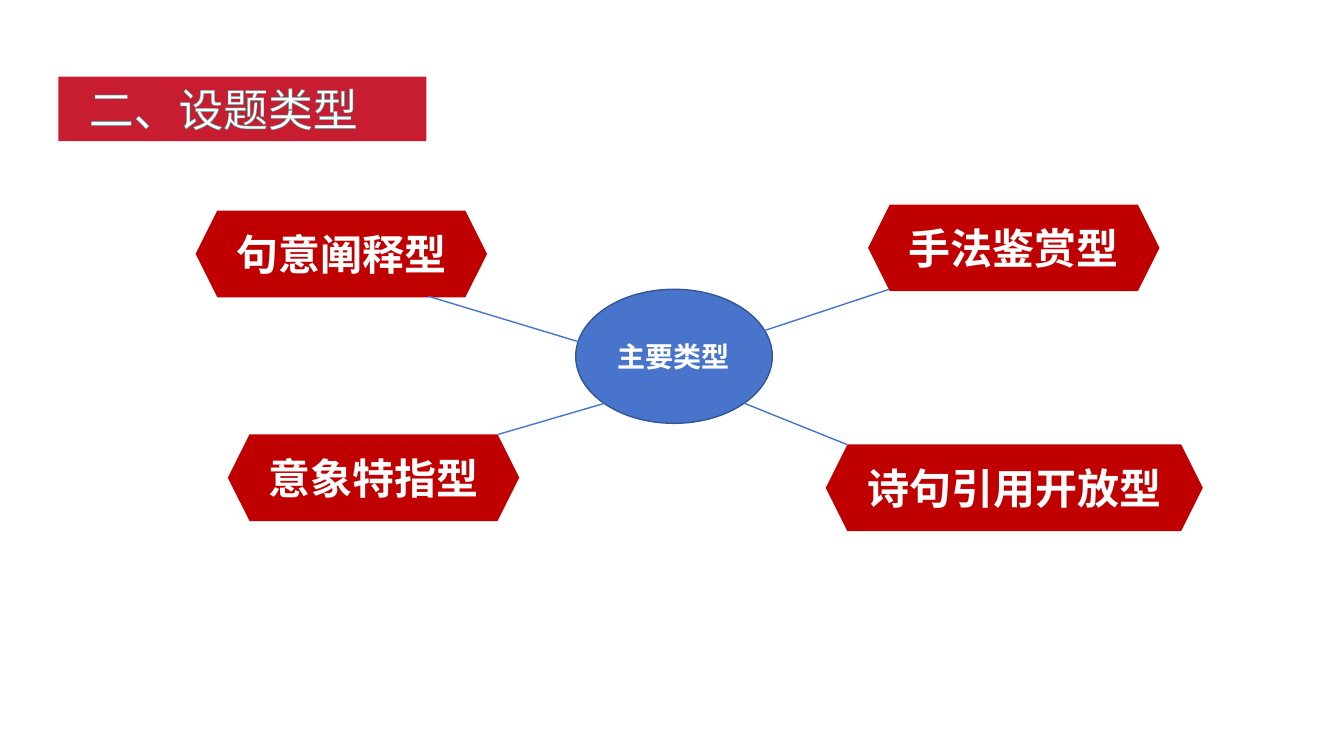
from lxml import etree
from pptx import Presentation
from pptx.dml.color import RGBColor
from pptx.enum.shapes import MSO_CONNECTOR, MSO_SHAPE
from pptx.enum.text import MSO_ANCHOR, PP_ALIGN
from pptx.oxml import parse_xml
from pptx.oxml.ns import nsdecls, qn
from pptx.util import Inches, Pt

CJK = "Noto Sans CJK SC"
RED, CRIMSON, BLUE, NAVY, TEAL, WHITE = (
    "C00000", "C81D31", "4874CB", "355696", "30C0B4", "FFFFFF")

HEADING = ("二、设题类型", (0.58, 0.76, 3.65, 0.64))
HUB = ("主要类型", (5.71, 2.87, 1.95, 1.33))
TYPE_HEIGHT = 0.86
TYPES = [
    ("句意阐释型", (1.94, 2.09), 2.89),
    ("手法鉴赏型", (8.61, 2.03), 2.89),
    ("意象特指型", (2.26, 4.31), 2.89),
    ("诗句引用开放型", (8.19, 4.41), 3.74),
]
SPOKES = [
    ((7.34, 3.36), (8.82, 2.87)),
    ((5.77, 3.4), (4.25, 2.94)),
    ((4.94, 4.31), (6, 4)),
    ((8.4, 4.41), (7.38, 4)),
]


def color(code):
    return RGBColor.from_string(code)


def add_label(slide, outline, words, box, fill, size, font, bold=True,
              align=PP_ALIGN.CENTER, anchor=MSO_ANCHOR.MIDDLE):
    label = slide.shapes.add_shape(outline, *map(Inches, box))
    label.shadow.inherit = False
    label.fill.solid()
    label.fill.fore_color.rgb = color(fill)
    label.line.fill.background()
    frame = label.text_frame
    frame.word_wrap = True
    frame.vertical_anchor = anchor
    frame.text = words
    frame.paragraphs[0].alignment = align
    run = frame.paragraphs[0].runs[0]
    run.font.size = Pt(size)
    run.font.bold = bold
    run.font.name = font
    run.font.color.rgb = color(WHITE)
    etree.SubElement(run.font._element, qn("a:ea")).set("typeface", CJK)
    return label


def add_heading(slide):
    words, box = HEADING
    heading = add_label(slide, MSO_SHAPE.RECTANGLE, words, box, CRIMSON, 32, "Arial",
                        False, PP_ALIGN.LEFT, MSO_ANCHOR.TOP)
    heading.text_frame.margin_left = Inches(0.3)
    run = heading.text_frame.paragraphs[0].runs[0]
    run.font._element.insert(0, parse_xml(
        f'<a:ln {nsdecls("a")} w="{Pt(0.8)}"><a:solidFill>'
        f'<a:srgbClr val="{TEAL}"/></a:solidFill></a:ln>'))


def add_type(slide, words, corner, width):
    label = add_label(slide, MSO_SHAPE.HEXAGON, words, (*corner, width, TYPE_HEIGHT),
                      RED, 30, CJK)
    frame = label.text_frame
    frame.margin_left = frame.margin_right = frame.margin_top = frame.margin_bottom = 0


def add_hub(slide):
    words, box = HUB
    hub = add_label(slide, MSO_SHAPE.OVAL, words, box, BLUE, 20, "Arial")
    hub.line.color.rgb = color(NAVY)
    hub.line.width = Pt(1)


def add_spoke(slide, start, end):
    spoke = slide.shapes.add_connector(MSO_CONNECTOR.STRAIGHT, *map(Inches, start + end))
    spoke.line.color.rgb = color(BLUE)
    spoke.line.width = Pt(1)
    etree.SubElement(spoke._element.spPr, qn("a:effectLst"))


def main():
    deck = Presentation()
    deck.slide_width, deck.slide_height = Inches(13.33), Inches(7.5)
    slide = deck.slides.add_slide(deck.slide_layouts[6])
    add_heading(slide)
    for words, corner, width in TYPES:
        add_type(slide, words, corner, width)
    add_hub(slide)
    for start, end in SPOKES:
        add_spoke(slide, start, end)
    deck.save("out.pptx")


if __name__ == "__main__":
    main()
